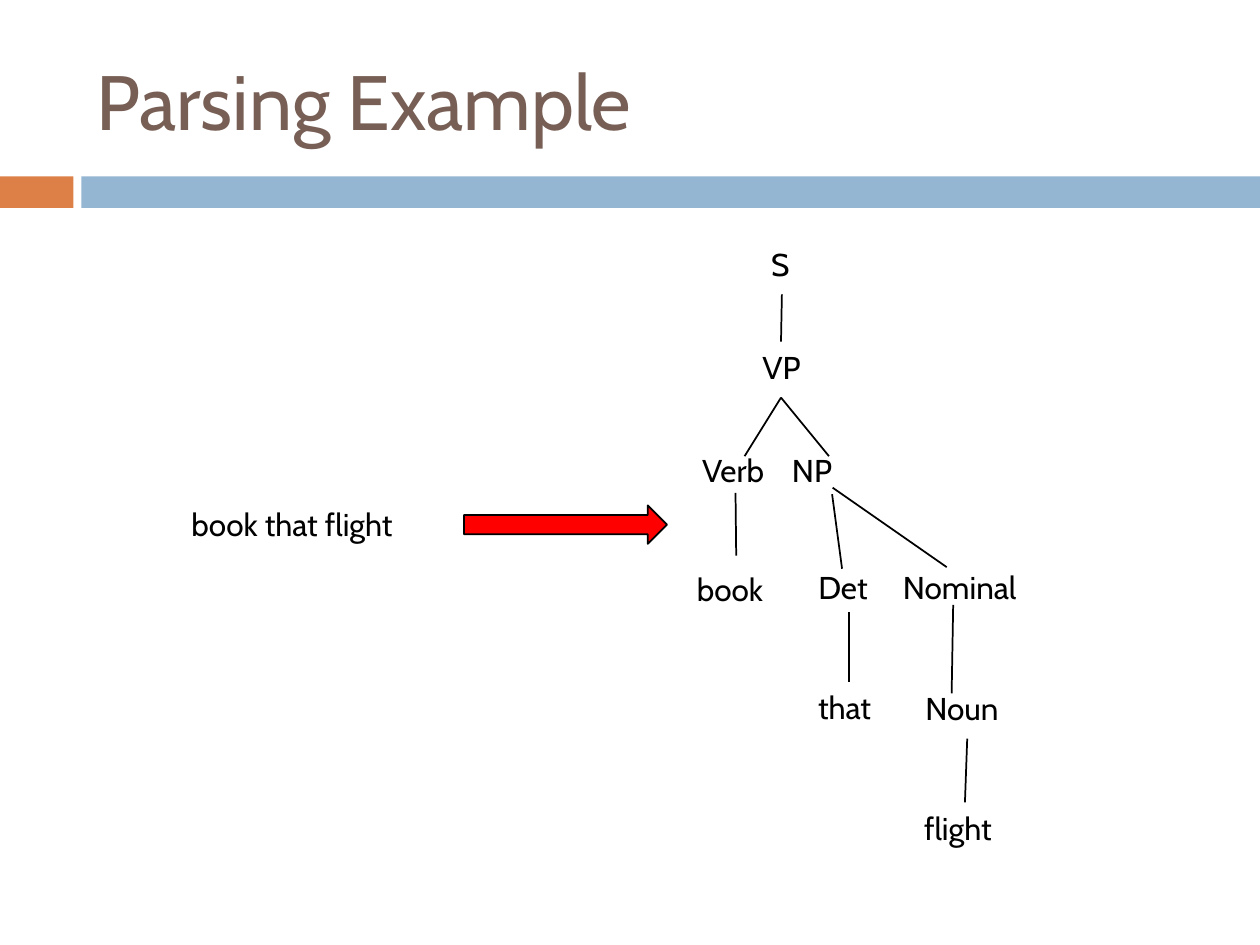
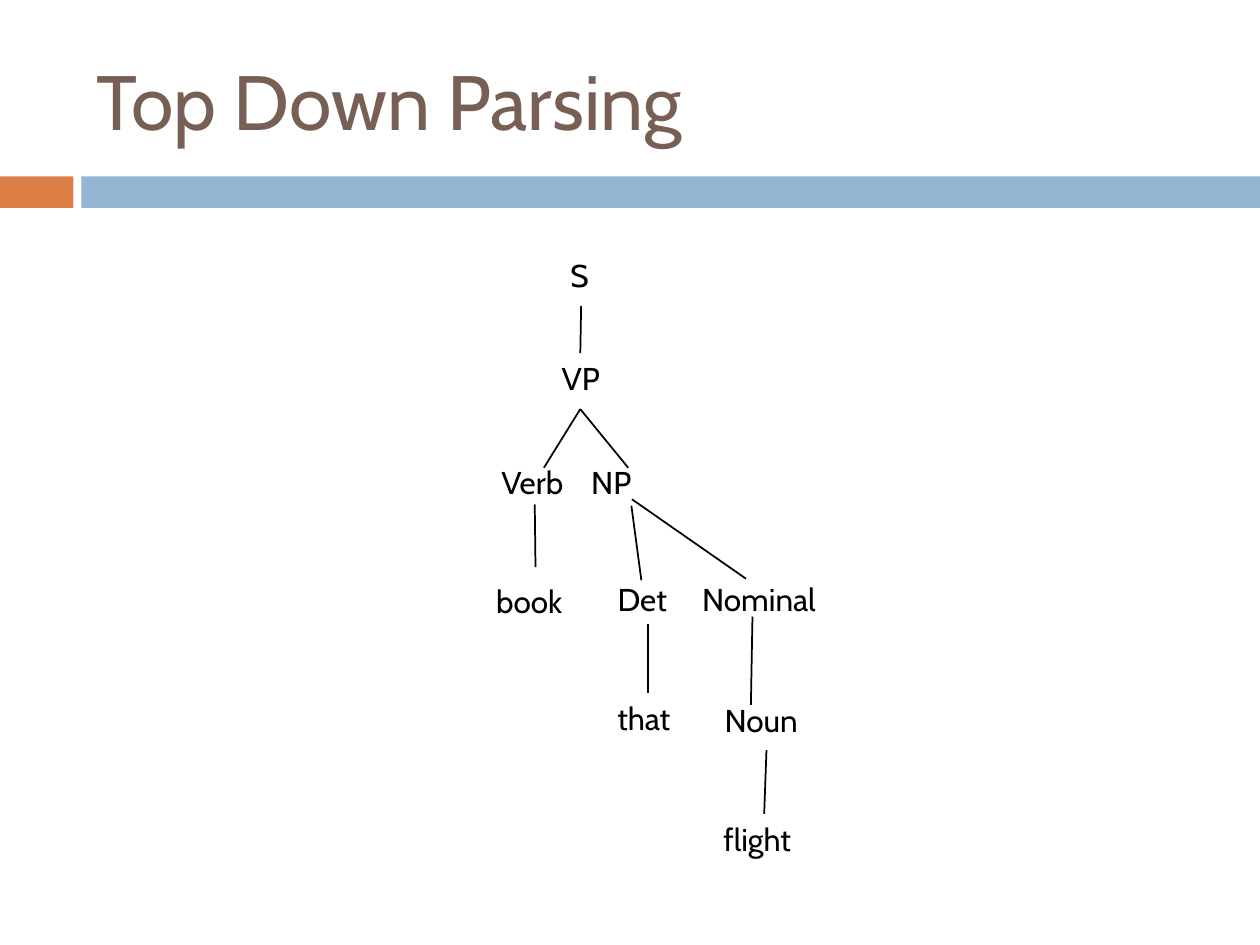
import pptx
import pptx.util
import pptx.dml.color
import pptx.enum.shapes
import pptx.enum.text
import pptx.oxml.ns
from lxml import etree

Pt = pptx.util.Pt
SHAPE = pptx.enum.shapes.MSO_SHAPE
ALIGN = pptx.enum.text.PP_ALIGN
ANCHOR = pptx.enum.text.MSO_ANCHOR

FONT = "Cabin"
COLORS = {"title": "775F55", "accent": "DD8047", "band": "94B6D2",
          "ink": "000000", "arrow": "FF0000"}

# Each tree hangs from its origin: the top centre of the S label.
SLIDES = [
    {"title": "Parsing Example", "origin": (446.3, 136.2),
     "input": "book that flight"},
    {"title": "Top Down Parsing", "origin": (331.6, 142.8)},
]

# Word, centre x and top y, from the origin
WORDS = [
    ("S", -0.4, 0),
    ("VP", 0.3, 59),
    ("Verb", -27.4, 118), ("NP", 17.7, 118),
    ("book", -29.2, 186), ("Det", 35.4, 185), ("Nominal", 102.1, 185),
    ("that", 36.3, 253.4), ("Noun", 103.4, 254),
    ("flight", 101.1, 322.5),
]

# Start and end of each branch, from the origin
BRANCHES = [
    ((0.5, 32), (0, 59)),               # S to VP
    ((0, 91), (-20.8, 124.5)),          # VP to Verb
    ((0, 91), (27.4, 124.5)),           # VP to NP
    ((-26, 145.5), (-25.6, 181.3)),     # Verb to book
    ((29.2, 146.2), (34.9, 188.8)),     # NP to Det
    ((29.5, 142.5), (94.7, 187.9)),     # NP to Nominal
    ((38.8, 213.6), (38.8, 253.3)),     # Det to that
    ((98.4, 209.5), (97.5, 260)),       # Nominal to Noun
    ((106.4, 285.9), (105.1, 322.3)),   # Noun to flight
]
CHAR = 8      # width allowed for one letter of a label
SPARE = 14    # width added to each label
ROW = 31.7    # height of a label


def rgb(name):
    return pptx.dml.color.RGBColor.from_string(COLORS[name])


def add_text(slide, text, box, size=18, color="ink"):
    shape = slide.shapes.add_textbox(*map(Pt, box))
    para = shape.text_frame.paragraphs[0]
    para.text = text
    para.font.name = FONT
    para.font.size = Pt(size)
    para.font.color.rgb = rgb(color)
    return shape.text_frame


def add_label(slide, text, mid, top):
    """Put one line of text centred on mid."""
    wide = CHAR * len(text) + SPARE
    frame = add_text(slide, text, (mid - wide / 2, top, wide, ROW))
    frame.margin_left = frame.margin_right = 0
    frame.word_wrap = False
    frame.paragraphs[0].alignment = ALIGN.CENTER


def add_block(slide, kind, box, color, edge=None):
    shape = slide.shapes.add_shape(kind, *map(Pt, box))
    shape.shadow.inherit = False
    shape.fill.solid()
    shape.fill.fore_color.rgb = rgb(color)
    if edge:
        shape.line.color.rgb = rgb(edge)
        shape.line.width = Pt(1)
    else:
        shape.line.fill.background()


def add_branch(slide, start, end):
    line = slide.shapes.add_connector(
        pptx.enum.shapes.MSO_CONNECTOR.STRAIGHT, *map(Pt, start + end))
    line.line.color.rgb = rgb("ink")
    line.line.width = Pt(1)
    etree.SubElement(line._element.spPr, pptx.oxml.ns.qn("a:effectLst"))


def add_frame(slide, title):
    """Draw the bands and the title that every slide has."""
    add_block(slide, SHAPE.RECTANGLE, (0, 100.8, 42, 18), "accent")
    add_block(slide, SHAPE.RECTANGLE, (46.5, 100.8, 673.5, 18), "band")
    frame = add_text(slide, title, (48, 18, 642, 78), 44, "title")
    frame.word_wrap = True
    frame.vertical_anchor = ANCHOR.MIDDLE


def add_tree(slide, origin):
    left, top = origin
    for word, x, y in WORDS:
        add_label(slide, word, left + x, top + y)
    for ends in BRANCHES:
        add_branch(slide, *((left + x, top + y) for x, y in ends))


def add_input(slide, text):
    """Show the sentence and the arrow to its tree."""
    add_label(slide, text, 166.9, 285.1)
    add_block(slide, SHAPE.RIGHT_ARROW, (265.2, 288.8, 116, 22),
              "arrow", "ink")


def main():
    deck = pptx.Presentation()
    deck.slide_width, deck.slide_height = Pt(720), Pt(540)
    for item in SLIDES:
        slide = deck.slides.add_slide(deck.slide_layouts[6])
        add_frame(slide, item["title"])
        add_tree(slide, item["origin"])
        if "input" in item:
            add_input(slide, item["input"])
    deck.save("out.pptx")


if __name__ == "__main__":
    main()
